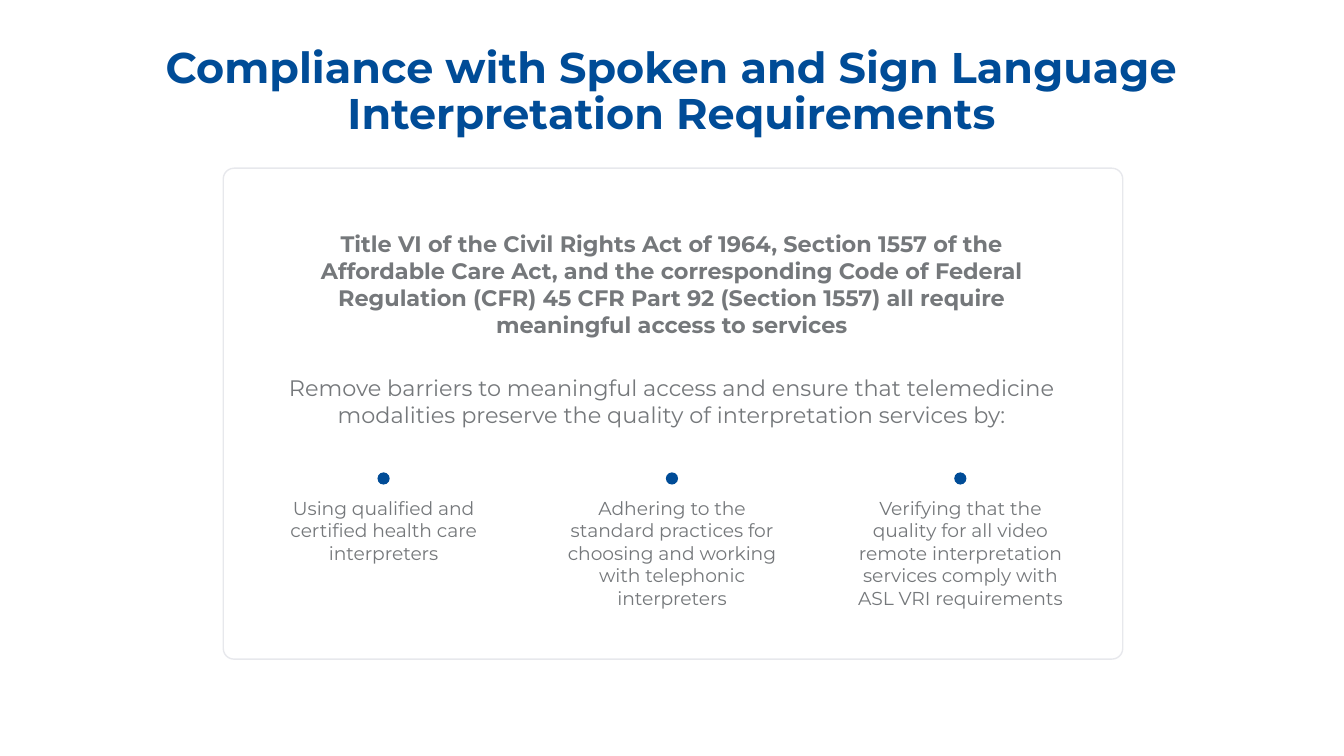
from lxml.etree import SubElement
from pptx import Presentation
from pptx.dml.color import RGBColor
from pptx.enum.shapes import MSO_SHAPE as Shape
from pptx.enum.text import MSO_ANCHOR as Anchor, PP_ALIGN as Align
from pptx.oxml.ns import qn
from pptx.util import Cm, Pt

BLUE, GREY, BORDER = "004C97", "75787B", "757892"


def color(value):
    return RGBColor.from_string(value)


def write(shape, text, size=12, ink=GREY, bold=False, inset=0.25,
          anchor=Anchor.TOP, spacing=None):
    frame = shape.text_frame
    frame.word_wrap = True
    frame.vertical_anchor = anchor
    frame.margin_left = frame.margin_right = Cm(inset)
    frame.margin_top = frame.margin_bottom = Cm(inset)
    para = frame.paragraphs[0]
    para.alignment = Align.CENTER
    if spacing:
        para.line_spacing = spacing
    span = para.add_run()
    span.text = text
    font = span.font
    font.name, font.size, font.bold = "Montserrat", Pt(size), bold
    font.color.rgb = color(ink)


class Page:
    def __init__(self, deck):
        self.slide = deck.slides.add_slide(deck.slide_layouts[5])

    def title(self, text, left, top, width, height):
        box = self.slide.shapes.title
        box.left, box.top = Cm(left), Cm(top)
        box.width, box.height = Cm(width), Cm(height)
        write(box, text, size=23, ink=BLUE, bold=True, inset=0.08,
              anchor=Anchor.MIDDLE, spacing=0.9)

    def text(self, text, left, top, width, height, **style):
        box = self.slide.shapes.add_textbox(
            Cm(left), Cm(top), Cm(width), Cm(height))
        write(box, text, **style)

    def card(self, left, top, width, height):
        card = self.slide.shapes.add_shape(
            Shape.ROUNDED_RECTANGLE, Cm(left), Cm(top), Cm(width), Cm(height))
        card.adjustments[0] = 0.022
        card.shadow.inherit = False
        card.fill.background()
        card.line.width = Pt(0.75)
        card.line.color.rgb = color(BORDER)
        # Let the border show at 17 % opacity
        tint = next(card.line._get_or_add_ln().iter(qn("a:srgbClr")))
        SubElement(tint, qn("a:alpha"), val="17000")

    def dot(self, center, top, size):
        dot = self.slide.shapes.add_shape(
            Shape.OVAL, Cm(center - size / 2), Cm(top), Cm(size), Cm(size))
        dot.shadow.inherit = False
        dot.fill.solid()
        dot.fill.fore_color.rgb = color(BLUE)
        dot.line.fill.background()


def main():
    deck = Presentation()
    deck.slide_width, deck.slide_height = Cm(25.4), Cm(14.29)
    page = Page(deck)

    # Title and card
    page.title("Compliance with Spoken and Sign Language "
               "Interpretation Requirements", 0, 1.19, 25.4, 1.12)
    page.card(4.22, 3.18, 17, 9.28)

    # Legal basis and lead-in
    page.text("Title VI of the Civil Rights Act of 1964, Section 1557 of the "
              "Affordable Care Act, and the corresponding Code of Federal "
              "Regulation (CFR) 45 CFR Part 92 (Section 1557) all require "
              "meaningful access to services",
              5.26, 4.11, 14.88, 1.52, bold=True)
    page.text("Remove barriers to meaningful access and ensure that "
              "telemedicine modalities preserve the quality of "
              "interpretation services by:", 4.82, 6.83, 15.76, 1.65)

    # Three measures, each under a dot
    measures = [
        ("Using qualified and certified health care interpreters", 4.4),
        ("Adhering to the standard practices for choosing and working "
         "with telephonic interpreters", 4.52),
        ("Verifying that the quality for all video remote interpretation "
         "services comply with ASL VRI requirements", 4.4),
    ]
    first_center, pitch = 7.25, 5.45
    for index, (measure, width) in enumerate(measures):
        center = first_center + index * pitch
        page.dot(center, 8.93, 0.23)
        page.text(measure, center - width / 2, 9.14, width, 2.67, size=10)

    deck.save("out.pptx")


if __name__ == "__main__":
    main()
